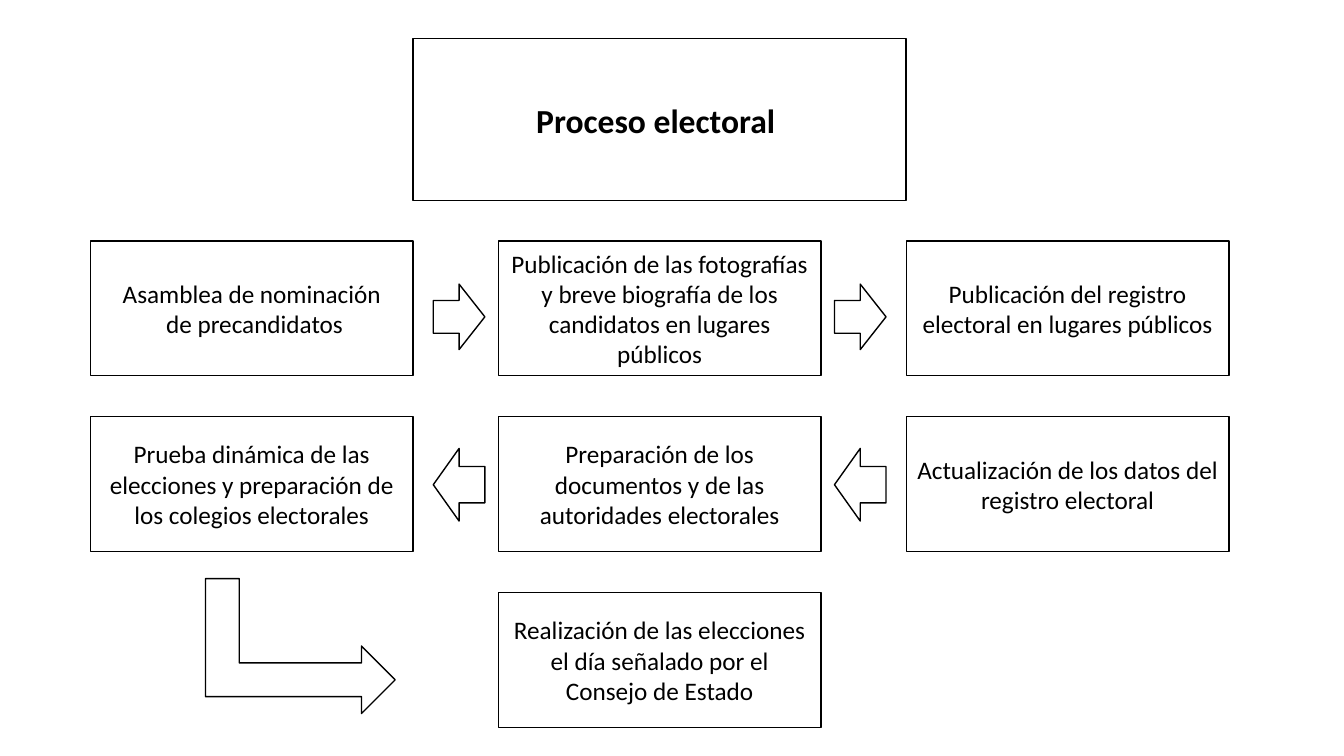
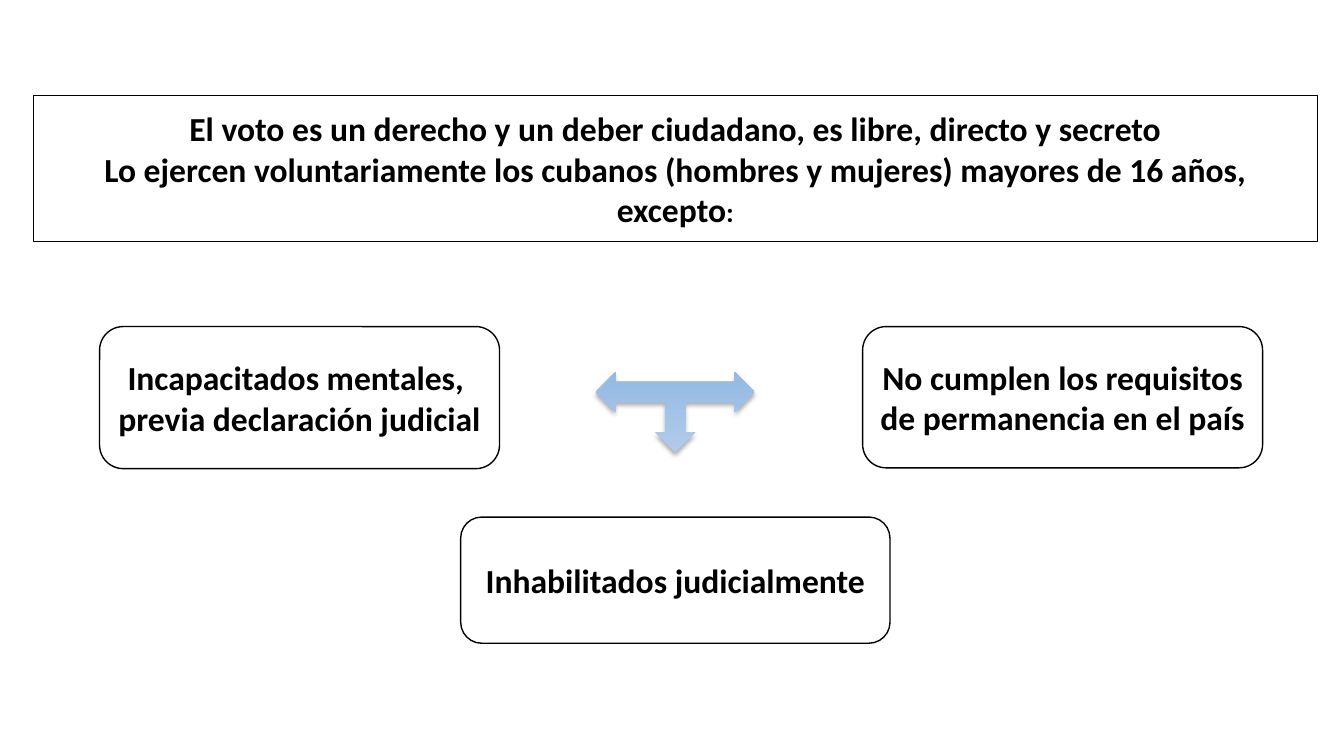
from lxml.etree import SubElement
from pptx import Presentation
from pptx.dml.color import RGBColor
from pptx.enum.shapes import MSO_SHAPE as SHAPE
from pptx.enum.text import MSO_ANCHOR as ANCHOR, MSO_AUTO_SIZE as AUTO, PP_ALIGN as ALIGN
from pptx.oxml.ns import qn
from pptx.util import Cm, Pt


def rgb(value):
    return RGBColor.from_string(value)


class Deck:
    """Builds slides of outlined boxes and arrows in one shared style."""

    FONT, INK, PAPER = "Calibri", "000000", "FFFFFF"
    TITLE_SIZE, TEXT_SIZE = 24, 18

    def __init__(self):
        self.prs = Presentation()
        self.prs.slide_width, self.prs.slide_height = Cm(33.87), Cm(19.05)
        self.s = None

    def outline(self, sp):
        sp.fill.solid()
        sp.fill.fore_color.rgb = rgb(self.PAPER)
        sp.line.color.rgb = rgb(self.INK)
        sp.line.width = Pt(1)

    def add_text(self, sp, lines, size, bold):
        tf = sp.text_frame
        tf.word_wrap, tf.auto_size = True, AUTO.NONE
        tf.vertical_anchor = ANCHOR.MIDDLE
        for i, line in enumerate(lines):
            p = tf.add_paragraph() if i else tf.paragraphs[0]
            p.alignment = ALIGN.CENTER
            p.font.name, p.font.size, p.font.bold = self.FONT, Pt(size), bold
            p.font.color.rgb = rgb(self.INK)
            p.add_run().text = line

    def slide(self, lines, x, y, w, h, preset="rect"):
        self.s = self.prs.slides.add_slide(self.prs.slide_layouts[5])
        sp = self.s.shapes.title
        sp.left, sp.top, sp.width, sp.height = Cm(x), Cm(y), Cm(w), Cm(h)
        geom = SubElement(sp.element.spPr, qn("a:prstGeom"), prst=preset)
        SubElement(geom, qn("a:avLst"))
        self.outline(sp)
        self.add_text(sp, lines, self.TITLE_SIZE, True)
        return sp

    def shape(self, kind, x, y, w, h, rotation=0):
        sp = self.s.shapes.add_shape(kind, Cm(x), Cm(y), Cm(w), Cm(h))
        sp.shadow.inherit = False
        sp.rotation = rotation
        self.outline(sp)
        return sp

    def box(self, lines, x, y, w, h):
        self.add_text(self.shape(SHAPE.RECTANGLE, x, y, w, h), lines, self.TEXT_SIZE, False)

    def card(self, lines, x, y, w, h):
        self.add_text(self.shape(SHAPE.ROUNDED_RECTANGLE, x, y, w, h), lines,
                      self.TITLE_SIZE, True)

    def shaded_arrow(self, kind, x, y, w, h, rotation, colors):
        sp = self.shape(kind, x, y, w, h, rotation)
        sp.line.fill.background()
        sp.fill.gradient()
        sp.fill.gradient_angle = 270
        for stop, color in zip(sp.fill.gradient_stops, colors):
            stop.color.rgb = rgb(color)
        effects = sp.element.spPr.find(qn("a:effectLst"))
        shadow = SubElement(effects, qn("a:outerShdw"), blurRad=str(Pt(3.5)),
                            dist=str(Pt(2.2)), dir="5400000", rotWithShape="0")
        color = SubElement(shadow, qn("a:srgbClr"), val=self.INK)
        SubElement(color, qn("a:alpha"), val="32000")


def process_slide(deck):
    deck.slide(["Proceso electoral "], 10.41, 0.97, 12.42, 4.09, "downArrowCallout")
    steps = [
        (0, 0, ["Asamblea de nominación", " de precandidatos"]),
        (1, 0, ["Publicación de las fotografías y breve biografía de los candidatos "
                "en lugares públicos"]),
        (2, 0, ["Publicación del registro electoral en lugares públicos"]),
        (2, 1, ["Actualización de los datos del registro electoral"]),
        (1, 1, ["Preparación de los documentos y de las autoridades electorales"]),
        (0, 1, ["Prueba dinámica de las elecciones y preparación de los colegios "
                "electorales"]),
        (1, 2, ["Realización de las elecciones el día señalado por el Consejo de Estado"]),
    ]
    for col, row, lines in steps:
        deck.box(lines, 2.28 + 10.28 * col, 6.07 + 4.43 * row, 8.13, 3.4)
    for kind, y, h in [(SHAPE.RIGHT_ARROW, 7.16, 1.65), (SHAPE.LEFT_ARROW, 11.3, 1.83)]:
        for x in (10.92, 21.03):
            deck.shape(kind, x, y, 1.3, h)
    deck.shape(SHAPE.BENT_UP_ARROW, 5.87, 13.89, 3.4, 4.78, 90)


def vote_slide(deck):
    sp = deck.slide(["El voto es un derecho y un deber ciudadano, es libre, directo y secreto",
                     "Lo ejercen voluntariamente los cubanos (hombres y mujeres) mayores de "
                     "16 años, excepto"], 0.84, 2.41, 32.36, 3.68)
    r = sp.text_frame.paragraphs[-1].add_run()
    r.text, r.font.size = ":", Pt(20)
    deck.shaded_arrow(SHAPE.LEFT_RIGHT_UP_ARROW, 15.01, 9.37, 4.01, 2.03, 180,
                      ("B1CBE9", "93B9E4"))
    deck.card(["Incapacitados mentales, ", "previa declaración judicial"],
              2.51, 8.23, 10.08, 3.58)
    deck.card(["Inhabilitados judicialmente"], 11.61, 13.03, 10.82, 3.18)
    deck.card(["No cumplen los requisitos de permanencia en el país"],
              21.74, 8.23, 10.08, 3.56)


def main():
    deck = Deck()
    process_slide(deck)
    vote_slide(deck)
    deck.prs.save("out.pptx")


if __name__ == "__main__":
    main()
